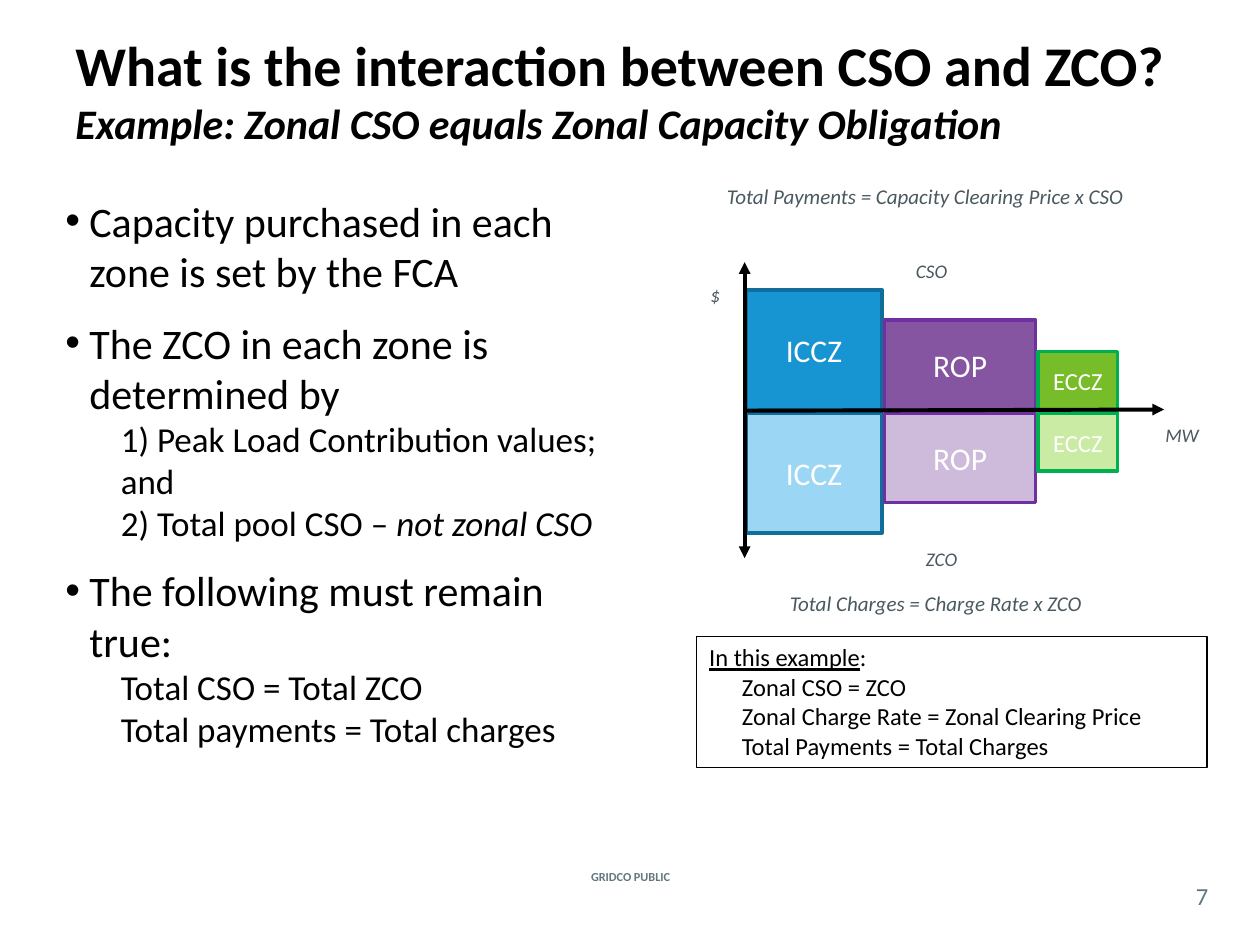
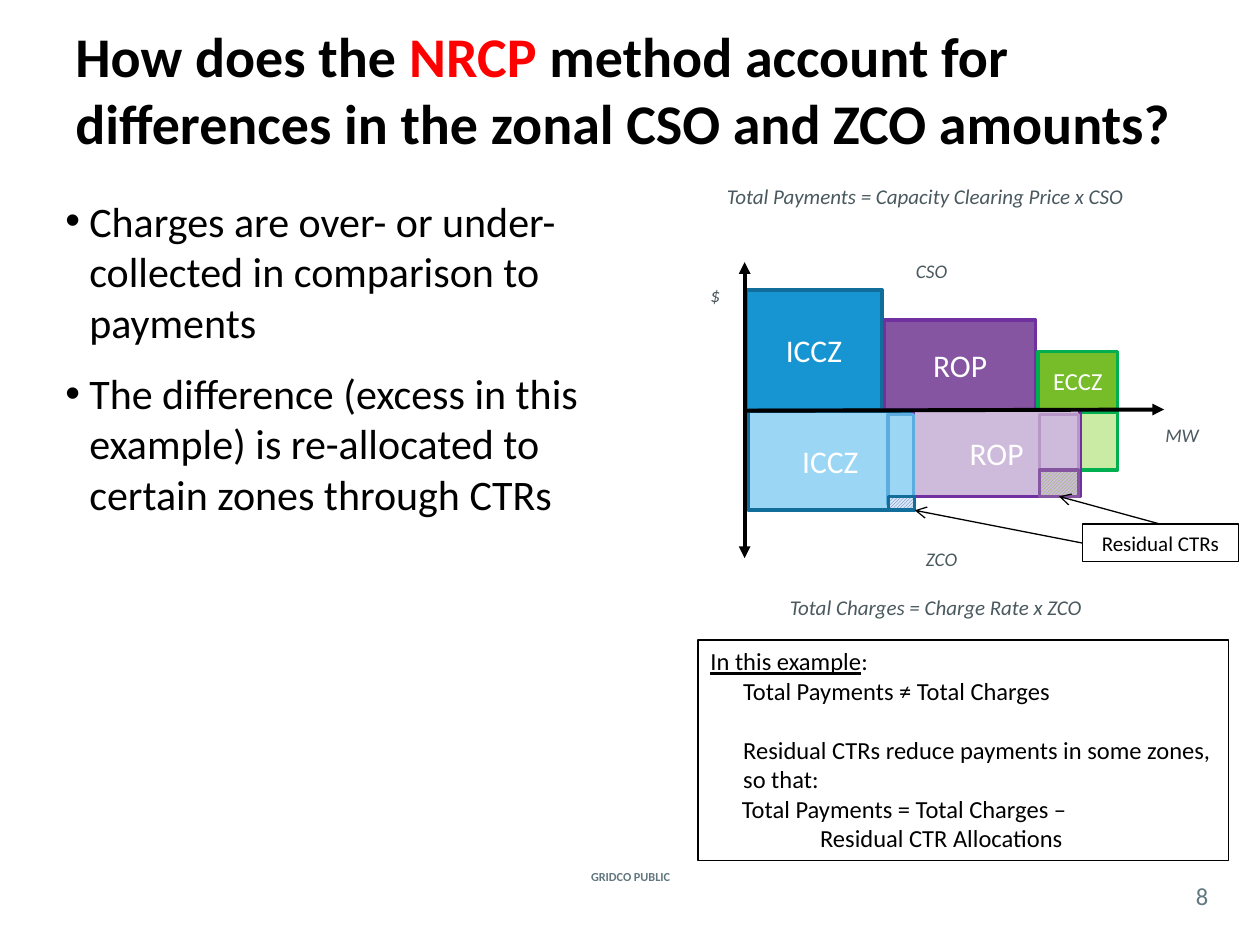
from dataclasses import dataclass

from lxml.etree import SubElement
from pptx import Presentation
from pptx.dml.color import RGBColor
from pptx.enum.dml import MSO_PATTERN
from pptx.enum.shapes import MSO_CONNECTOR, MSO_SHAPE
from pptx.enum.text import MSO_ANCHOR, PP_ALIGN
from pptx.oxml.ns import qn
from pptx.util import Inches, Pt


@dataclass(frozen=True)
class Theme:
    font: str = "Calibri"
    black: str = "000000"
    white: str = "FFFFFF"
    red: str = "FF0000"
    caption: str = "4A595F"
    footer: str = "62777F"
    title_size: int = 32
    body_size: int = 24
    sub_size: int = 20
    block_size: int = 18
    note_size: int = 14
    caption_size: int = 12
    label_size: int = 11
    footer_size: int = 7
    block_line: float = 2
    axis_line: float = 2.25
    thin_line: float = 0.75


THEME = Theme()
BLUE = dict(fill="1795D2", light="9BD7F4", line="116E9B")
PURPLE = dict(fill="8555A1", light="CEBADB", line="7030A0")
GREEN = dict(fill="77BD2A", light="C9EBA4", line="00B050")

# Paragraph styles: indents in inches, space before in points
BULLET = dict(left=0.19, first=-0.19, before=12, bullet="•", size=THEME.body_size)
SUB = dict(left=0.44, size=THEME.sub_size)
NOTE = dict(size=THEME.note_size)
NOTE_LINE = dict(left=0.26, size=THEME.note_size)
NOTE_GAP = dict(NOTE_LINE, before=17)
NOTE_TAB = dict(left=0.37, first=-0.12, tab=1.88, size=THEME.note_size)
CENTRED = dict(align=PP_ALIGN.CENTER)

# A paragraph is (style, run, run, ...); a run is a text or (text, format)
NOTE_HEADING = (NOTE, ("In this example", dict(underline=True)), ":")
FOOTER = "GRIDCO PUBLIC"

SLIDES = [
    dict(
        number="7",
        title=["What is the interaction between CSO and ZCO?\n",
               ("Example: Zonal CSO equals Zonal Capacity Obligation",
                dict(size=24, italic=True))],
        body=[
            (BULLET, "Capacity purchased in each zone is set by the FCA"),
            (BULLET, "The ZCO in each zone is determined by"),
            (SUB, "1) Peak Load Contribution values; and"),
            (SUB, "2) Total pool CSO – ", ("not zonal CSO", dict(italic=True))),
            (BULLET, "The following must remain true:"),
            (SUB, "Total CSO = Total ZCO"),
            (SUB, "Total payments = Total charges"),
        ],
        charges_top=4.64,
        note_box=(5.53, 5.05, 4.05, 1.04),
        note=[
            NOTE_HEADING,
            (NOTE_LINE, "Zonal CSO = ZCO"),
            (NOTE_LINE, "Zonal Charge Rate = Zonal Clearing Price"),
            (NOTE_LINE, "Total Payments = Total Charges"),
        ],
    ),
    dict(
        number="8",
        title=["How does the ", ("NRCP", dict(color=THEME.red)),
               " method account for differences in the zonal CSO and ZCO amounts?"],
        body=[
            (BULLET, "Charges are over- or under-collected in comparison to payments"),
            (BULLET, "The difference (excess in this example) is re-allocated "
                     "to certain zones through CTRs"),
        ],
        charges_top=4.67,
        note_box=(5.54, 5.08, 4.21, 1.75),
        note=[
            NOTE_HEADING,
            (NOTE_LINE, "Total Payments ≠ Total Charges"),
            (NOTE_GAP, "Residual CTRs reduce payments in some zones, so that:"),
            (NOTE_TAB, "Total Payments = Total Charges – \n\tResidual CTR Allocations"),
        ],
    ),
]

# Zone name, width (MW), height ($), palette, label size
ZONES = [
    ("ICCZ", 1.08, 0.95, BLUE, THEME.block_size),
    ("ROP", 1.2, 0.71, PURPLE, THEME.block_size),
    ("ECCZ", 0.63, 0.46, GREEN, THEME.note_size),
]
ZONES_LEFT, ZONE_GAP = 5.92, 0.02
CSO_BOTTOM, ZCO_TOP = 3.25, 3.28

# ZCO blocks that differ from the CSO: label, box, palette
SHIFTED_ZCO = [
    ("", (8.24, 3.27, 0.63, 0.46), GREEN),
    ("ICCZ", (5.94, 3.26, 1.3, 0.79), BLUE),
    ("ROP", (7.25, 3.25, 1.32, 0.69), PURPLE),
]
# Overlaps between neighbouring ZCO blocks: box, fill, line
OVERLAPS = [
    ((7.05, 3.29, 0.2, 0.71), BLUE["light"], "5BACDF"),
    ((8.25, 3.29, 0.31, 0.65), PURPLE["light"], "B697C8"),
]
# Hatched residuals: box, hatch colours, line
RESIDUALS = [
    ((7.05, 3.94, 0.21, 0.11), (PURPLE["fill"], "CDEBFA"), BLUE["line"]),
    ((8.25, 3.73, 0.31, 0.21), (GREEN["fill"], PURPLE["light"]), PURPLE["fill"]),
]
RESIDUAL_LABEL = (8.59, 4.16, 1.24, 0.3)

# Start, end, arrowhead at the start as well
AXES = [
    ((5.91, 4.43), (5.91, 2.08), True),
    ((5.93, 3.26), (9.24, 3.25), False),
]
AXIS_LABELS = [
    ("$", (5.54, 2.2, 0.33, 0.29)),
    ("MW", (9.15, 3.31, 0.67, 0.29)),
    ("CSO", (7.17, 2.01, 0.67, 0.29)),
    ("ZCO", (7.25, 4.29, 0.67, 0.29)),
]


def rgb(color):
    return RGBColor.from_string(color)


def inches(values):
    return [Inches(value) for value in values]


def style_paragraph(paragraph, style, is_first):
    paragraph.alignment = style.get("align", PP_ALIGN.LEFT)
    paragraph.space_before = Pt(0 if is_first else style.get("before", 0))
    properties = paragraph._p.get_or_add_pPr()
    properties.set("marL", str(Inches(style.get("left", 0))))
    properties.set("indent", str(Inches(style.get("first", 0))))
    if "bullet" in style:
        SubElement(properties, qn("a:buFont"), typeface="Arial")
        SubElement(properties, qn("a:buChar"), char=style["bullet"])
    if "tab" in style:
        tabs = SubElement(properties, qn("a:tabLst"))
        SubElement(tabs, qn("a:tab"), pos=str(Inches(style["tab"])), algn="l")


def add_run(paragraph, text, look):
    run = paragraph.add_run()
    run.text = text
    font = run.font
    font.name = THEME.font
    font.size = Pt(look["size"])
    font.color.rgb = rgb(look.get("color", THEME.black))
    for flag in ("bold", "italic", "underline"):
        setattr(font, flag, look.get(flag, False))


def write(shape, paragraphs, anchor=MSO_ANCHOR.TOP, **look):
    """Fill a shape with styled paragraphs; look holds the default run format."""
    frame = shape.text_frame
    frame.word_wrap = True
    frame.vertical_anchor = anchor
    for index, (style, *runs) in enumerate(paragraphs):
        paragraph = frame.add_paragraph() if index else frame.paragraphs[0]
        style_paragraph(paragraph, style, index == 0)
        for run in runs:
            text, extra = (run, {}) if isinstance(run, str) else run
            for part_index, part in enumerate(text.split("\n")):
                if part_index:
                    paragraph.add_line_break()
                if part:
                    add_run(paragraph, part, {**look, **style, **extra})


def add_text(slide, box, paragraphs, **look):
    shape = slide.shapes.add_textbox(*inches(box))
    write(shape, paragraphs, **look)
    return shape


def add_box(slide, box, line, width, fill=None, hatch=None):
    shape = slide.shapes.add_shape(MSO_SHAPE.RECTANGLE, *inches(box))
    shape.shadow.inherit = False
    shape.line.color.rgb = rgb(line)
    shape.line.width = Pt(width)
    if hatch:
        shape.fill.patterned()
        shape.fill.pattern = MSO_PATTERN.LIGHT_UPWARD_DIAGONAL
        shape.fill.fore_color.rgb, shape.fill.back_color.rgb = map(rgb, hatch)
    elif fill:
        shape.fill.solid()
        shape.fill.fore_color.rgb = rgb(fill)
    else:
        shape.fill.background()
    return shape


def add_block(slide, label, box, fill, line, size=THEME.block_size):
    block = add_box(slide, box, line, THEME.block_line, fill)
    if label:
        write(block, [(CENTRED, label)], MSO_ANCHOR.MIDDLE, size=size, color=THEME.white)


def add_line(slide, start, end, width, tail, head=None):
    line = slide.shapes.add_connector(MSO_CONNECTOR.STRAIGHT, *inches(start + end))
    line.line.color.rgb = rgb(THEME.black)
    line.line.width = Pt(width)
    outline = line.line._get_or_add_ln()
    if head:
        SubElement(outline, qn("a:headEnd"), type=head)
    SubElement(outline, qn("a:tailEnd"), type=tail)
    SubElement(line._element.spPr, qn("a:effectLst"))
    return line


def add_zones(slide, above):
    """Draw the zones side by side, above (CSO) or below (ZCO) the MW axis."""
    left = ZONES_LEFT
    for name, width, height, palette, size in ZONES:
        top = CSO_BOTTOM - height if above else ZCO_TOP
        fill = palette["fill" if above else "light"]
        add_block(slide, name, (left, top, width, height), fill, palette["line"], size)
        left += width + ZONE_GAP


def add_residuals(slide):
    for box, fill, line in OVERLAPS:
        add_block(slide, "", box, fill, line)
    corner_hatch, side_hatch = [
        add_box(slide, box, line, THEME.block_line, hatch=hatch)
        for box, hatch, line in RESIDUALS]
    label = add_box(slide, RESIDUAL_LABEL, THEME.black, THEME.thin_line)
    write(label, [(CENTRED, "Residual CTRs")], size=THEME.caption_size)

    left, top, width, height = RESIDUALS[0][0]
    corner = (left + width, top + height)
    to_corner = add_line(slide, corner, corner, THEME.thin_line, "arrow")
    to_corner.begin_connect(label, 1)
    to_side = add_line(slide, corner, corner, THEME.thin_line, "arrow")
    to_side.begin_connect(label, 0)
    to_side.end_connect(side_hatch, 2)


def add_axes_and_captions(slide, charges_top):
    for start, end, double in AXES:
        add_line(slide, start, end, THEME.axis_line, "triangle",
                 "triangle" if double else None)
    captions = [
        ("Total Payments = Capacity Clearing Price x CSO", (5.67, 1.41, 3.92, 0.3)),
        ("Total Charges = Charge Rate x ZCO", (6.17, charges_top, 3, 0.3)),
    ]
    for size, labels in ((THEME.caption_size, captions), (THEME.label_size, AXIS_LABELS)):
        for text, box in labels:
            add_text(slide, box, [({}, text)], size=size, color=THEME.caption, italic=True)


def add_frame(slide, content):
    """Add the footer, page number, title and bullet text every slide has."""
    add_text(slide, (4.27, 6.87, 1.47, 0.17), [(CENTRED, FOOTER)], anchor=MSO_ANCHOR.MIDDLE,
             size=THEME.footer_size, color=THEME.footer, bold=True)
    number = add_text(slide, (9.33, 6.96, 0.42, 0.29), [(CENTRED, content["number"])],
                      anchor=MSO_ANCHOR.MIDDLE, size=THEME.note_size, color=THEME.footer)
    frame = number.text_frame
    frame.margin_left = frame.margin_right = frame.margin_top = frame.margin_bottom = 0
    add_text(slide, (0.5, 0.08, 9, 1.25), [({}, *content["title"])],
             anchor=MSO_ANCHOR.MIDDLE, size=THEME.title_size, bold=True)
    add_text(slide, (0.42, 1.5, 4.42, 5.21), content["body"])


def main():
    presentation = Presentation()
    presentation.slide_width, presentation.slide_height = Inches(10), Inches(7.5)
    for content in SLIDES:
        slide = presentation.slides.add_slide(presentation.slide_layouts[6])
        add_frame(slide, content)
        has_residuals = content is SLIDES[1]
        if has_residuals:
            for label, box, palette in SHIFTED_ZCO:
                add_block(slide, label, box, palette["light"], palette["line"])
        else:
            add_zones(slide, above=False)
        add_zones(slide, above=True)
        if has_residuals:
            add_residuals(slide)
        add_axes_and_captions(slide, content["charges_top"])
        note = add_box(slide, content["note_box"], THEME.black, THEME.thin_line)
        write(note, content["note"])
    presentation.save("out.pptx")


if __name__ == "__main__":
    main()
